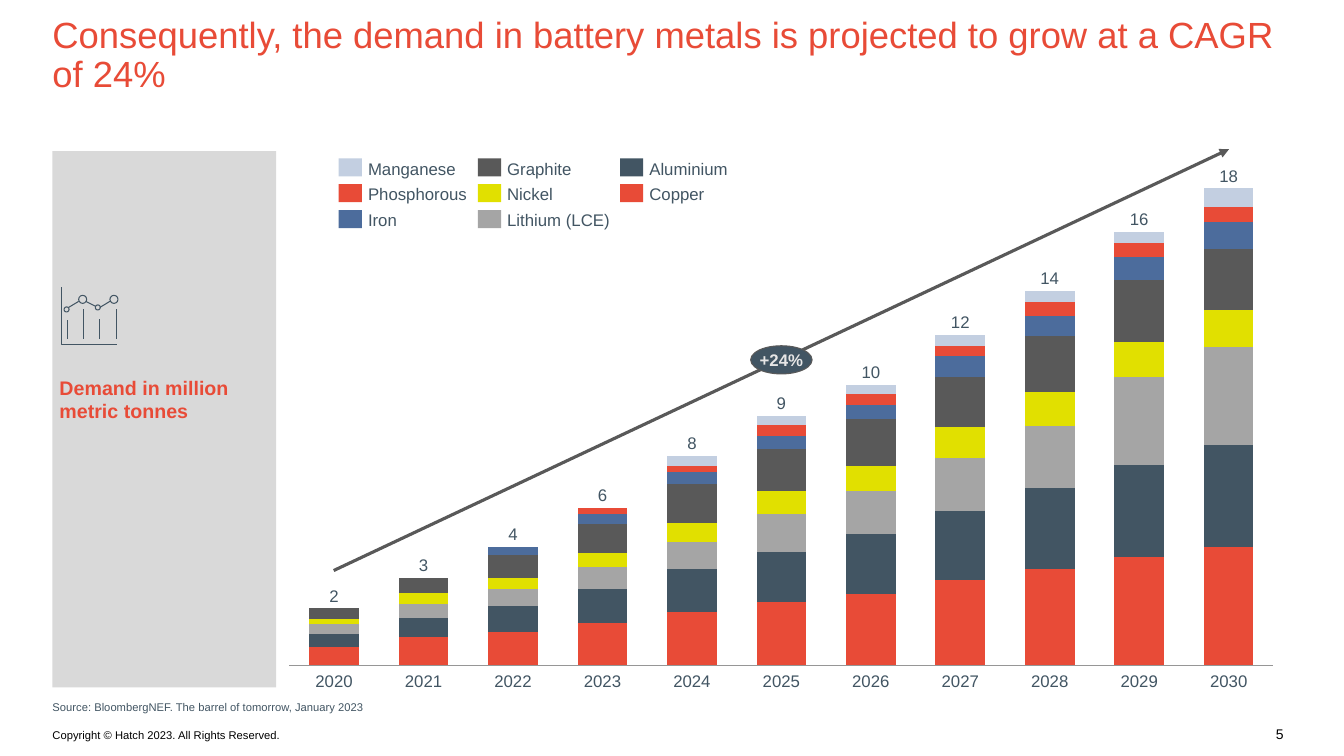
from collections import namedtuple
from dataclasses import dataclass

from lxml import etree
from pptx import Presentation
from pptx.chart.data import CategoryChartData
from pptx.dml.color import RGBColor
from pptx.enum.chart import XL_CHART_TYPE, XL_TICK_LABEL_POSITION, XL_TICK_MARK
from pptx.enum.shapes import MSO_CONNECTOR, MSO_SHAPE
from pptx.enum.text import MSO_ANCHOR, PP_ALIGN
from pptx.oxml.ns import qn
from pptx.util import Inches, Pt

STACKED = XL_CHART_TYPE.COLUMN_STACKED
NO_LABELS, NO_TICKS = XL_TICK_LABEL_POSITION.NONE, XL_TICK_MARK.NONE
STRAIGHT = MSO_CONNECTOR.STRAIGHT
RECTANGLE, OVAL = MSO_SHAPE.RECTANGLE, MSO_SHAPE.OVAL
TOP, MIDDLE, BOTTOM = MSO_ANCHOR.TOP, MSO_ANCHOR.MIDDLE, MSO_ANCHOR.BOTTOM
LEFT, CENTER, RIGHT = PP_ALIGN.LEFT, PP_ALIGN.CENTER, PP_ALIGN.RIGHT

Box = namedtuple("Box", "left top width height")


@dataclass(frozen=True)
class Theme:
    font: str = "Arial"
    red: str = "E84B37"
    slate: str = "425563"
    silver: str = "A5A5A5"
    yellow: str = "E1E000"
    charcoal: str = "595959"
    blue: str = "4C6C9C"
    pale_blue: str = "C3CFE1"
    panel: str = "D9D9D9"
    axis: str = "969696"
    badge_text: str = "E7E6E6"
    black: str = "000000"
    title_size: int = 26
    heading_size: int = 14
    label_size: int = 12
    number_size: int = 10
    note_size: int = 8
    thin: float = 0.75
    thick: float = 2.25


THEME = Theme()
YEARS = range(2020, 2031)
TOTALS = [2, 3, 4, 6, 8, 9, 10, 12, 14, 16, 18]
METALS = [
    ("Copper", THEME.red, [15, 24, 28, 36, 45, 53, 60, 72, 81, 91, 100]),
    ("Aluminium", THEME.slate, [11, 16, 22, 28, 36, 43, 51, 58, 69, 78, 86]),
    ("Lithium (LCE)", THEME.silver, [9, 12, 14, 19, 23, 32, 36, 45, 52, 75, 83]),
    ("Nickel", THEME.yellow, [4, 9, 10, 12, 16, 19, 21, 26, 29, 29, 31]),
    ("Graphite", THEME.charcoal, [9, 13, 19, 24, 33, 36, 40, 43, 47, 53, 52]),
    ("Iron", THEME.blue, [0, 0, 7, 9, 10, 11, 12, 17, 17, 19, 23]),
    ("Phosphorous", THEME.red, [0, 0, 0, 5, 5, 9, 9, 9, 12, 12, 12]),
    ("Manganese", THEME.pale_blue, [0, 0, 0, 0, 9, 8, 8, 9, 9, 9, 16]),
]
AXIS_MAX = 403


def color(value):
    return RGBColor.from_string(value)


def inches(values):
    return [Inches(value) for value in values]


def write(frame, lines, size, ink, align=LEFT, anchor=TOP, bold=False, wrap=False):
    frame.margin_left = frame.margin_right = frame.margin_top = frame.margin_bottom = 0
    frame.word_wrap = wrap
    frame.vertical_anchor = anchor
    paragraph = frame.paragraphs[0]
    paragraph.alignment = align
    for index, line in enumerate(lines):
        if index:
            paragraph.add_line_break()
        run = paragraph.add_run()
        run.text = line
        run.font.name, run.font.size, run.font.bold = THEME.font, Pt(size), bold
        run.font.color.rgb = color(ink)


def add_text(slide, box, lines, size, ink, **options):
    write(slide.shapes.add_textbox(*inches(box)).text_frame, lines, size, ink, **options)


def style_shape(shape, fill=None, line=None):
    shape.shadow.inherit = False
    if fill:
        shape.fill.solid()
        shape.fill.fore_color.rgb = color(fill)
    else:
        shape.fill.background()
    if line:
        shape.line.color.rgb = color(line)
        shape.line.width = Pt(THEME.thin)
    else:
        shape.line.fill.background()


def add_shape(shapes, preset, box, fill=None, line=None):
    shape = shapes.add_shape(preset, *inches(box))
    style_shape(shape, fill, line)
    return shape


def add_line(shapes, points, ink, width, arrow=False):
    connector = shapes.add_connector(STRAIGHT, *inches(points))
    connector.line.color.rgb = color(ink)
    connector.line.width = Pt(width)
    properties = connector._element.spPr
    if arrow:
        etree.SubElement(properties.find(qn("a:ln")), qn("a:tailEnd"), type="triangle")
    etree.SubElement(properties, qn("a:effectLst"))


def add_title(slide, box):
    title = slide.shapes.title
    title.left, title.top, title.width, title.height = inches(box)
    text = "Consequently, the demand in battery metals is projected to grow at a CAGR of 24%"
    write(title.text_frame, [text], THEME.title_size, THEME.red, anchor=BOTTOM, wrap=True)
    title.text_frame.margin_top = title.text_frame.margin_bottom = Inches(0.04)
    title.text_frame.paragraphs[0].line_spacing = 0.9


def add_demand_chart(slide, box):
    data = CategoryChartData()
    data.categories = [str(year) for year in YEARS]
    for name, _, values in METALS:
        data.add_series(name, values)
    chart = slide.shapes.add_chart(STACKED, *inches(box), data).chart
    chart.has_legend = chart.has_title = False
    chart.font.name, chart.font.size = THEME.font, Pt(THEME.number_size)
    chart.font.color.rgb = color(THEME.black)
    plot = chart.plots[0]
    plot.gap_width, plot.overlap, plot.vary_by_categories = 80, 100, False
    for series, (_, fill, _) in zip(plot.series, METALS):
        series.format.fill.solid()
        series.format.fill.fore_color.rgb = color(fill)
    years = chart.category_axis
    years.tick_label_position, years.major_tick_mark = NO_LABELS, NO_TICKS
    years.format.line.color.rgb = color(THEME.axis)
    years.format.line.width = Pt(THEME.thin)
    amounts = chart.value_axis
    amounts.minimum_scale, amounts.maximum_scale = 0, AXIS_MAX
    amounts.has_major_gridlines = amounts.visible = False

    area = Box(box.left + 0.09, box.top + 0.09, box.width - 0.18, box.height - 0.18)
    plot_area = chart._chartSpace.chart.plotArea
    for old in plot_area.findall(qn("c:layout")):
        plot_area.remove(old)
    layout = etree.Element(qn("c:layout"))
    plot_area.insert(0, layout)
    manual = etree.SubElement(layout, qn("c:manualLayout"))
    for tag, value in (
        ("layoutTarget", "inner"), ("xMode", "edge"), ("yMode", "edge"),
        ("x", (area.left - box.left) / box.width), ("y", (area.top - box.top) / box.height),
        ("w", area.width / box.width), ("h", area.height / box.height),
    ):
        etree.SubElement(manual, qn("c:" + tag), val=str(value))

    step = area.width / len(YEARS)
    base = area.top + area.height
    stacks = [sum(column) for column in zip(*(values for _, _, values in METALS))]
    for index, (year, total, stack) in enumerate(zip(YEARS, TOTALS, stacks)):
        middle = area.left + step * (index + 0.5)
        bar_top = base - area.height * stack / AXIS_MAX
        for text, top, anchor in ((year, base + 0.05, TOP), (total, bar_top - 0.23, BOTTOM)):
            add_text(slide, Box(middle - 0.19, top, 0.38, 0.2), [str(text)],
                     THEME.label_size, THEME.slate, align=CENTER, anchor=anchor)


def add_growth_arrow(slide, box):
    right, bottom = box.left + box.width, box.top + box.height
    add_line(slide.shapes, (box.left, bottom, right, box.top), THEME.charcoal, THEME.thick, True)
    width, height = 0.61, 0.28
    badge_box = Box(box.left + (box.width - width) / 2, box.top + (box.height - height) / 2, width, height)
    badge = add_shape(slide.shapes, OVAL, badge_box, THEME.slate, THEME.charcoal)
    write(badge.text_frame, ["+24%"], THEME.label_size, THEME.badge_text,
          align=CENTER, anchor=MIDDLE, bold=True)


def add_legend(slide, box):
    rows = 3
    pitch = box.height / rows
    column_offsets = (0, 1.38, 2.79)
    for index, (name, fill, _) in enumerate(reversed(METALS)):
        column, row = divmod(index, rows)
        left, top = box.left + column_offsets[column], box.top + row * pitch
        add_shape(slide.shapes, RECTANGLE, Box(left, top, 0.23, 0.18), fill)
        add_text(slide, Box(left + 0.29, top, 1.02, 0.2), [name],
                 THEME.label_size, THEME.slate, anchor=MIDDLE)


def add_trend_icon(slide, box):
    shapes = slide.shapes.add_group_shape().shapes
    right, bottom = box.left + box.width, box.top + box.height
    builder = shapes.build_freeform(Inches(right), Inches(bottom))
    builder.add_line_segments(
        [(Inches(box.left), Inches(bottom)), (Inches(box.left), Inches(box.top))], close=False)
    style_shape(builder.convert_to_shape(), line=THEME.slate)
    for x, y, size in ((0.05, 0.22, 0.05), (0.21, 0.12, 0.08), (0.36, 0.2, 0.05), (0.52, 0.12, 0.08)):
        circle = Box(box.left + x - size / 2, box.top + y - size / 2, size, size)
        add_shape(shapes, OVAL, circle, line=THEME.slate)
    for x1, y1, x2, y2 in (
        (0.06, 0.51, 0.06, 0.32), (0.22, 0.51, 0.22, 0.22),
        (0.38, 0.51, 0.38, 0.31), (0.55, 0.51, 0.55, 0.22),
        (0.07, 0.2, 0.17, 0.14), (0.24, 0.14, 0.34, 0.19), (0.38, 0.2, 0.48, 0.14),
    ):
        points = (box.left + x1, box.top + y1, box.left + x2, box.top + y2)
        add_line(shapes, points, THEME.slate, THEME.thin)


def add_side_panel(slide, box):
    add_shape(slide.shapes, RECTANGLE, box, THEME.panel)
    add_text(slide, Box(box.left + 0.07, box.top + 2.26, 1.94, 0.4),
             ["Demand in million", "metric tonnes"], THEME.heading_size, THEME.red,
             anchor=MIDDLE, bold=True)
    add_trend_icon(slide, Box(box.left + 0.09, box.top + 1.35, 0.55, 0.57))


def add_footer(slide, box):
    add_text(slide, Box(box.left, box.top, 8.52, 0.13),
             ["Source: BloombergNEF. The barrel of tomorrow, January 2023"],
             THEME.note_size, THEME.slate, anchor=BOTTOM, wrap=True)
    add_text(slide, Box(box.left, box.top + 0.24, 2.29, 0.21),
             ["Copyright © Hatch 2023. All Rights Reserved."],
             THEME.note_size, THEME.black, anchor=MIDDLE, wrap=True)
    add_text(slide, Box(box.left + box.width - 0.35, box.top + 0.24, 0.35, 0.19), ["5"],
             THEME.number_size, THEME.black, align=RIGHT, anchor=MIDDLE, wrap=True)


def main():
    presentation = Presentation()
    presentation.slide_width, presentation.slide_height = Inches(13.33), Inches(7.5)
    slide = presentation.slides.add_slide(presentation.slide_layouts[5])
    add_title(slide, Box(0.52, 0, 12.28, 0.99))
    add_demand_chart(slide, Box(2.78, 1.78, 9.94, 4.91))
    add_growth_arrow(slide, Box(3.31, 1.48, 8.88, 4.18))
    add_legend(slide, Box(3.36, 1.57, 3.85, 0.77))
    add_side_panel(slide, Box(0.52, 1.5, 2.22, 5.32))
    add_footer(slide, Box(0.52, 6.95, 12.21, 0.45))
    presentation.save("out.pptx")


if __name__ == "__main__":
    main()
